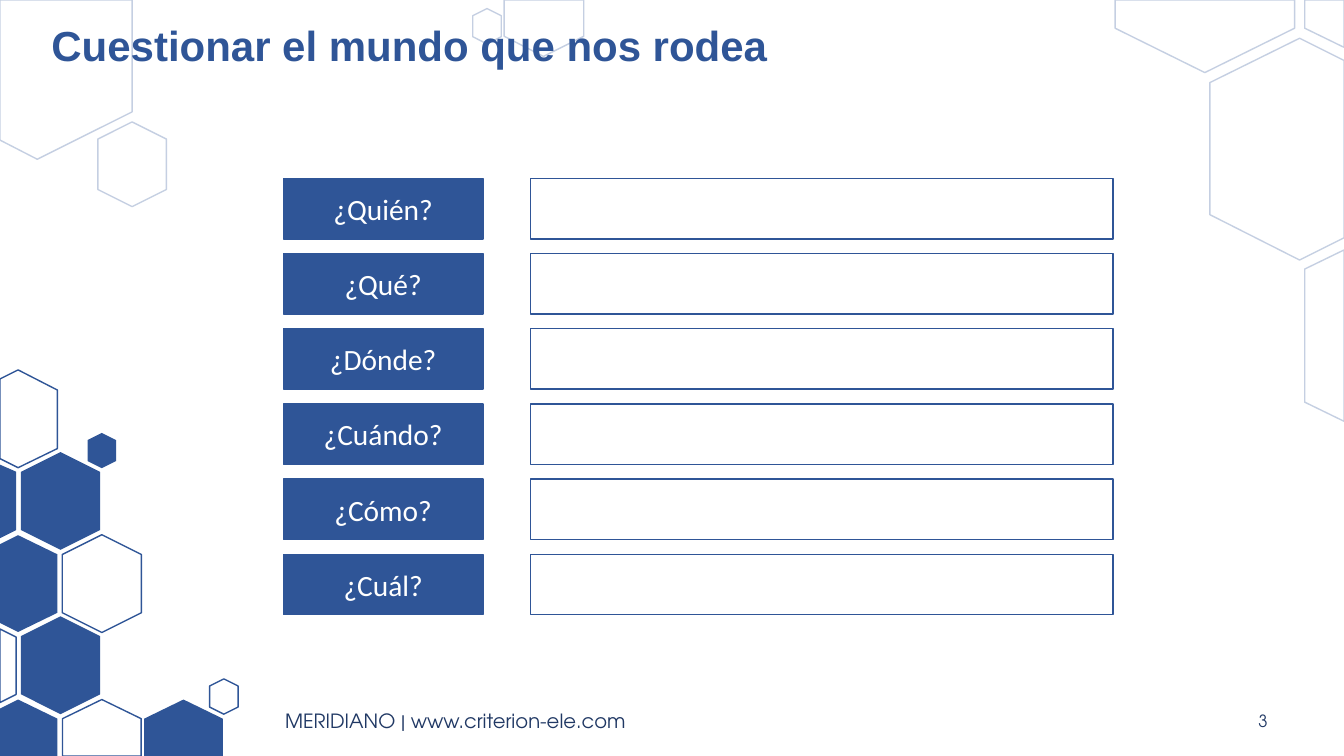
"""Builds the slide of question words with a hexagon frame."""
from lxml.etree import SubElement
from pptx import Presentation
from pptx.dml.color import RGBColor
from pptx.enum.shapes import MSO_SHAPE
from pptx.enum.text import MSO_ANCHOR, PP_ALIGN
from pptx.oxml.ns import qn
from pptx.util import Inches, Pt

TITLE = "Cuestionar el mundo que nos rodea"
QUESTIONS = ["¿Quién?", "¿Qué?", "¿Dónde?", "¿Cuándo?", "¿Cómo?", "¿Cuál?"]
FOOTERS = [
    ("MERIDIANO | www.criterion-ele.com", 2.73, 6.53, 14, PP_ALIGN.LEFT),
    ("3", 11.68, 0.99, 12, PP_ALIGN.RIGHT),
]
COLORS = {"blue": "2F5597", "navy": "203864", "white": "FFFFFF"}

HEXAGONS = {
    "faint": [(4.83, 0.26, 0.35), (1.31, 1.63, 0.84)],
    "outline": [(1.01, 5.79, 0.97), (2.22, 6.91, 0.35)],
    "solid": [(0.6, 4.97, 0.97), (0.6, 6.6, 0.97), (1.01, 4.47, 0.35)],
}
CUT_HEXAGONS = {
    "faint": [
        [(5, 0), (5.79, 0), (5.79, 0.36), (5.39, 0.56), (5, 0.36)],
        [(11.06, 0), (12.84, 0), (12.84, 0.28), (11.95, 0.72), (11.06, 0.28)],
        [(12.94, 0), (13.33, 0), (13.33, 0.47), (12.94, 0.28)],
        [(12.89, 0.38), (13.33, 0.6), (13.33, 2.36), (12.89, 2.58), (12, 2.13), (12, 0.82)],
        [(0, 0), (1.31, 0), (1.31, 1.11), (0.37, 1.58), (0, 1.39)],
        [(13.33, 2.48), (13.33, 4.18), (12.94, 3.99), (12.94, 2.67)],
    ],
    "outline": [
        [(0.18, 3.67), (0.57, 3.87), (0.57, 4.45), (0.18, 4.64), (0, 4.55), (0, 3.76)],
        [(0, 6.24), (0.16, 6.32), (0.16, 6.89), (0, 6.97)],
        [(1.01, 6.94), (1.4, 7.13), (1.4, 7.5), (0.62, 7.5), (0.62, 7.13)],
    ],
    "solid": [
        [(0, 4.61), (0.16, 4.68), (0.16, 5.26), (0, 5.34)],
        [(0.18, 5.31), (0.57, 5.5), (0.57, 6.08), (0.18, 6.27), (0, 6.18), (0, 5.4)],
        [(0.18, 6.94), (0.57, 7.13), (0.57, 7.5), (0, 7.5), (0, 7.03)],
        [(1.82, 6.94), (2.21, 7.13), (2.21, 7.5), (1.43, 7.5), (1.43, 7.13)],
    ],
}
HEXAGON_RATIO = 0.81
FAINT_ALPHA = "28000"
FIRST_ROW, LAST_ROW, ROW_HEIGHT = 1.77, 5.5, 0.6
QUESTION_COLUMN, ANSWER_COLUMN = (2.81, 1.98), (5.26, 5.78)


def color(name):
    return RGBColor.from_string(COLORS[name])


def paint(shape, fill=None, line=None):
    shape.shadow.inherit = False
    if fill:
        shape.fill.solid()
        shape.fill.fore_color.rgb = color(fill)
    else:
        shape.fill.background()
    if line:
        shape.line.color.rgb = color(line)
        shape.line.width = Pt(1)
    else:
        shape.line.fill.background()


def paint_hexagon(shape, style):
    if style == "solid":
        paint(shape, "blue")
    else:
        paint(shape, "white", "blue")
    if style == "faint":
        line_color = shape.line._ln.find(".//" + qn("a:srgbClr"))
        SubElement(line_color, qn("a:alpha"), val=FAINT_ALPHA)


def write(shape, text, size, font_name, font_color, align):
    frame = shape.text_frame
    frame.word_wrap = True
    frame.vertical_anchor = MSO_ANCHOR.MIDDLE
    paragraph = frame.paragraphs[0]
    paragraph.text = text
    paragraph.alignment = align
    paragraph.font.size = Pt(size)
    paragraph.font.name = font_name
    paragraph.font.color.rgb = color(font_color)
    return paragraph


def add_hexagons(shapes):
    for style, hexagons in HEXAGONS.items():
        for center_x, center_y, length in hexagons:
            breadth = length * HEXAGON_RATIO
            hexagon = shapes.add_shape(
                MSO_SHAPE.HEXAGON, Inches(center_x - length / 2),
                Inches(center_y - breadth / 2), Inches(length), Inches(breadth))
            hexagon.rotation = 90
            paint_hexagon(hexagon, style)
    for style, outlines in CUT_HEXAGONS.items():
        for outline in outlines:
            start, *corners = [(Inches(x), Inches(y)) for x, y in outline]
            builder = shapes.build_freeform(*start)
            builder.add_line_segments(corners, close=True)
            paint_hexagon(builder.convert_to_shape(), style)


def add_title(shapes):
    title = shapes.title
    shapes._spTree.append(title._element)
    title.left, title.top = Inches(0.41), Inches(0.18)
    title.width, title.height = Inches(11.56), Inches(0.6)
    paragraph = write(title, TITLE, 30, "Arial", "blue", PP_ALIGN.LEFT)
    paragraph.font.bold = True
    paragraph.line_spacing = 0.9


def add_footers(shapes):
    for text, left, width, size, align in FOOTERS:
        footer = shapes.add_textbox(Inches(left), Inches(6.95), Inches(width), Inches(0.4))
        write(footer, text, size, "TeX Gyre Adventor", "navy", align)


def add_rows(shapes):
    pitch = (LAST_ROW - FIRST_ROW) / (len(QUESTIONS) - 1)
    for row, text in enumerate(QUESTIONS):
        top = FIRST_ROW + row * pitch
        question, answer = [
            shapes.add_shape(MSO_SHAPE.RECTANGLE, Inches(left), Inches(top),
                             Inches(width), Inches(ROW_HEIGHT))
            for left, width in (QUESTION_COLUMN, ANSWER_COLUMN)]
        paint(question, "blue", "blue")
        paint(answer, line="blue")
        write(question, text, 21, "Calibri", "white", PP_ALIGN.CENTER)


def main():
    deck = Presentation()
    deck.slide_width, deck.slide_height = Inches(13.33), Inches(7.5)
    shapes = deck.slides.add_slide(deck.slide_layouts[5]).shapes
    add_hexagons(shapes)
    add_title(shapes)
    add_footers(shapes)
    add_rows(shapes)
    deck.save("out.pptx")


if __name__ == "__main__":
    main()
